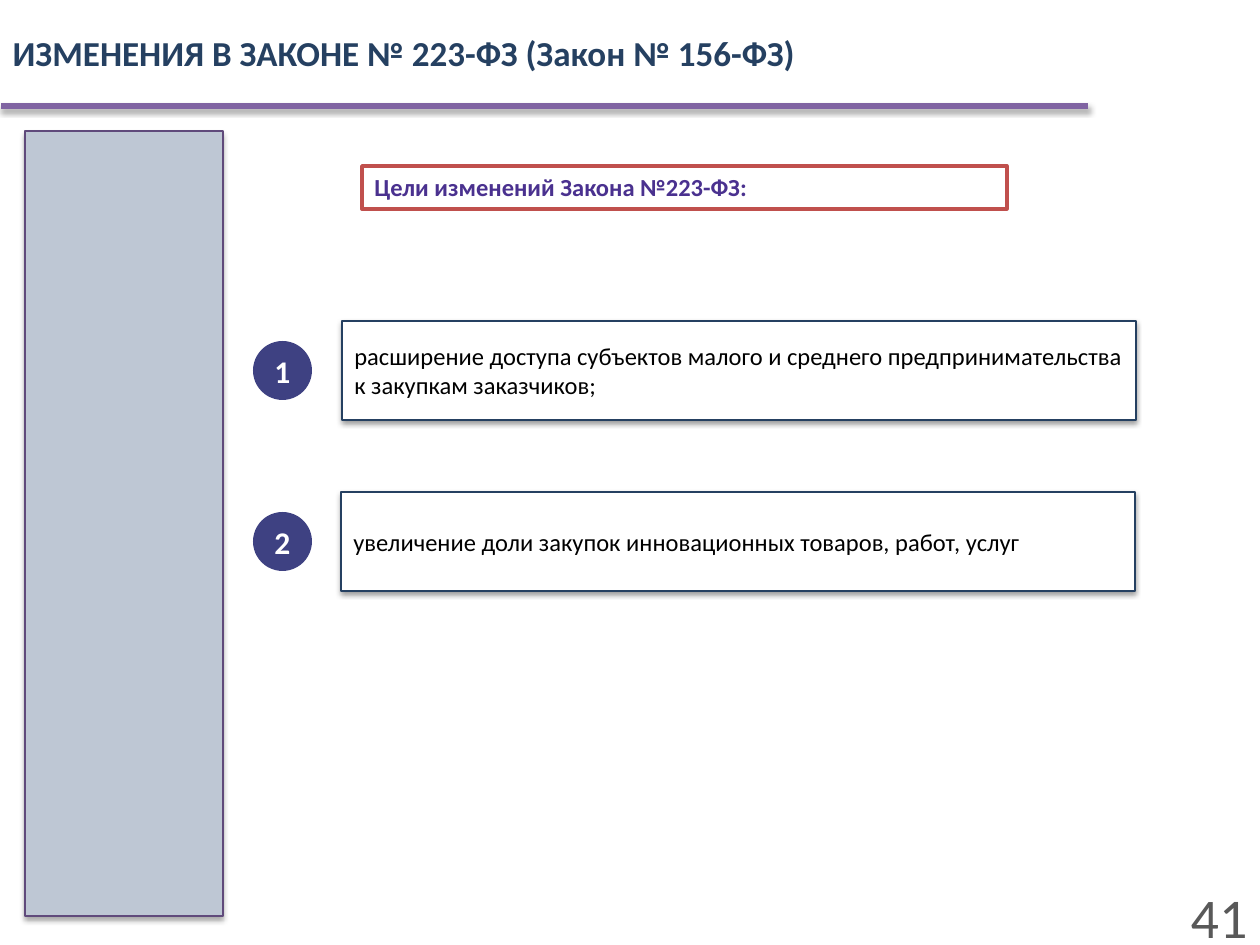
from dataclasses import dataclass

from lxml import etree
from pptx import Presentation
from pptx import util as u
from pptx.dml.color import RGBColor
from pptx.enum import shapes, text
from pptx.oxml.ns import qn


@dataclass(frozen=True)
class Theme:
    """Colours, type sizes and line widths of the slide."""
    font: str = "Calibri"
    navy: str = "254061"
    purple: str = "8064A2"
    plum: str = "604A7B"
    panel: str = "BEC7D4"
    red: str = "C0504D"
    violet: str = "4A318F"
    badge: str = "3E4182"
    grey: str = "595959"
    white: str = "FFFFFF"
    black: str = "000000"
    body_size: int = 14
    badge_size: int = 18
    title_size: int = 20
    number_size: int = 32
    thin: float = 0.75
    medium: float = 2
    thick: float = 3


def px(length):
    """Turn whole pixels into EMU at 126 pixels to the inch."""
    return u.Inches(length / 126)


def write(frame, lines, *, font, size, color, bold=False,
          align=text.PP_ALIGN.LEFT, anchor=text.MSO_ANCHOR.MIDDLE):
    """Fill a text frame with one formatted paragraph per line."""
    frame.text = lines
    frame.word_wrap = True
    frame.auto_size = text.MSO_AUTO_SIZE.NONE
    frame.vertical_anchor = anchor
    for paragraph in frame.paragraphs:
        paragraph.alignment = align
        paragraph.font.name = font
        paragraph.font.size = u.Pt(size)
        paragraph.font.bold = bold
        paragraph.font.color.rgb = RGBColor.from_string(color)


def add_shadow(effects, opacity, distance):
    """Add a soft downward shadow to an effect list."""
    shadow = etree.SubElement(
        effects, qn("a:outerShdw"), blurRad=str(u.Pt(3.1)),
        dist=str(u.Pt(distance)), dir="5400000", rotWithShape="0")
    color = etree.SubElement(shadow, qn("a:srgbClr"), val="000000")
    etree.SubElement(color, qn("a:alpha"), val=str(opacity * 1000))


class SlideBuilder:
    """Hold the theme and the current slide, and draw its elements."""

    def __init__(self, slide, theme):
        """Keep the slide and its theme."""
        self.slide = slide
        self.theme = theme

    def title(self, words, left, top, width, height):
        """Place and format the title placeholder."""
        title = self.slide.shapes.title
        title.left, title.top = px(left), px(top)
        title.width, title.height = px(width), px(height)
        write(title.text_frame, words, font=self.theme.font, bold=True,
              size=self.theme.title_size, color=self.theme.navy)

    def rule(self, left, right, top):
        """Draw the shadowed line under the title."""
        line = self.slide.shapes.add_connector(
            shapes.MSO_CONNECTOR.STRAIGHT,
            px(left), px(top), px(right), px(top))
        line.line.color.rgb = RGBColor.from_string(self.theme.purple)
        line.line.width = u.Pt(self.theme.thick)
        properties = line._element.spPr
        add_shadow(etree.SubElement(properties, qn("a:effectLst")), 35, 1.8)

    def shape(self, left, top, width, height, fill, *, line=None, weight=0,
              shadow=None, kind=shapes.MSO_SHAPE.RECTANGLE):
        """Draw a filled shape with an optional outline and shadow."""
        shape = self.slide.shapes.add_shape(
            kind, px(left), px(top), px(width), px(height))
        shape.fill.solid()
        shape.fill.fore_color.rgb = RGBColor.from_string(fill)
        if line:
            shape.line.color.rgb = RGBColor.from_string(line)
            shape.line.width = u.Pt(weight)
        else:
            shape.line.fill.background()
        shape.shadow.inherit = False
        if shadow:
            effects = shape._element.spPr.find(qn("a:effectLst"))
            add_shadow(effects, *shadow)
        return shape

    def heading(self, words, left, top, width, height):
        """Draw the outlined heading above the goals."""
        theme = self.theme
        shape = self.shape(left, top, width, height, theme.white,
                           line=theme.red, weight=theme.medium)
        write(shape.text_frame, words, font=theme.font, bold=True,
              size=theme.body_size, color=theme.violet,
              anchor=text.MSO_ANCHOR.TOP)

    def goal(self, number, words, left, top):
        """Draw a goal card with its round number beside it."""
        theme = self.theme
        height, diameter = 99, 59
        card = self.shape(left, top, 794, height, theme.white, line=theme.navy,
                          weight=theme.thin, shadow=(38, 1.6))
        write(card.text_frame, words, font=theme.font,
              size=theme.body_size, color=theme.black)
        badge = self.shape(253, top + (height - diameter) // 2, diameter,
                           diameter, theme.badge, kind=shapes.MSO_SHAPE.OVAL)
        badge.text_frame.margin_left = badge.text_frame.margin_right = 0
        write(badge.text_frame, str(number), font=theme.font, bold=True,
              size=theme.badge_size, color=theme.white,
              align=text.PP_ALIGN.CENTER)

    def page_number(self, number, left, top, width, height):
        """Write the page number in the corner."""
        box = self.slide.shapes.add_textbox(
            px(left), px(top), px(width), px(height))
        box.text_frame.margin_left = 0
        write(box.text_frame, str(number), font=self.theme.font,
              size=self.theme.number_size, color=self.theme.grey,
              align=text.PP_ALIGN.RIGHT)


def main():
    """Build the slide and save it."""
    presentation = Presentation()
    presentation.slide_width, presentation.slide_height = px(1260), px(945)
    slide = presentation.slides.add_slide(presentation.slide_layouts[5])
    theme = Theme()
    builder = SlideBuilder(slide, theme)
    builder.title("ИЗМЕНЕНИЯ В ЗАКОНЕ № 223-ФЗ (Закон № 156-ФЗ)",
                  0, 0, 1087, 105)
    builder.page_number(41, 1177, 888, 83, 57)
    builder.rule(1, 1088, 106)
    builder.shape(25, 131, 198, 785, theme.panel, line=theme.plum,
                  weight=theme.thin, shadow=(35, 1.8))
    builder.heading("Цели изменений Закона №223-ФЗ:", 362, 166, 645, 43)
    goals = [
        (342, "расширение доступа субъектов малого и среднего "
              "предпринимательства\nк закупкам заказчиков;"),
        (341, "увеличение доли закупок инновационных товаров, работ, услуг"),
    ]
    for index, (left, words) in enumerate(goals):
        builder.goal(index + 1, words, left, 321 + index * 171)
    presentation.save("out.pptx")


if __name__ == "__main__":
    main()
